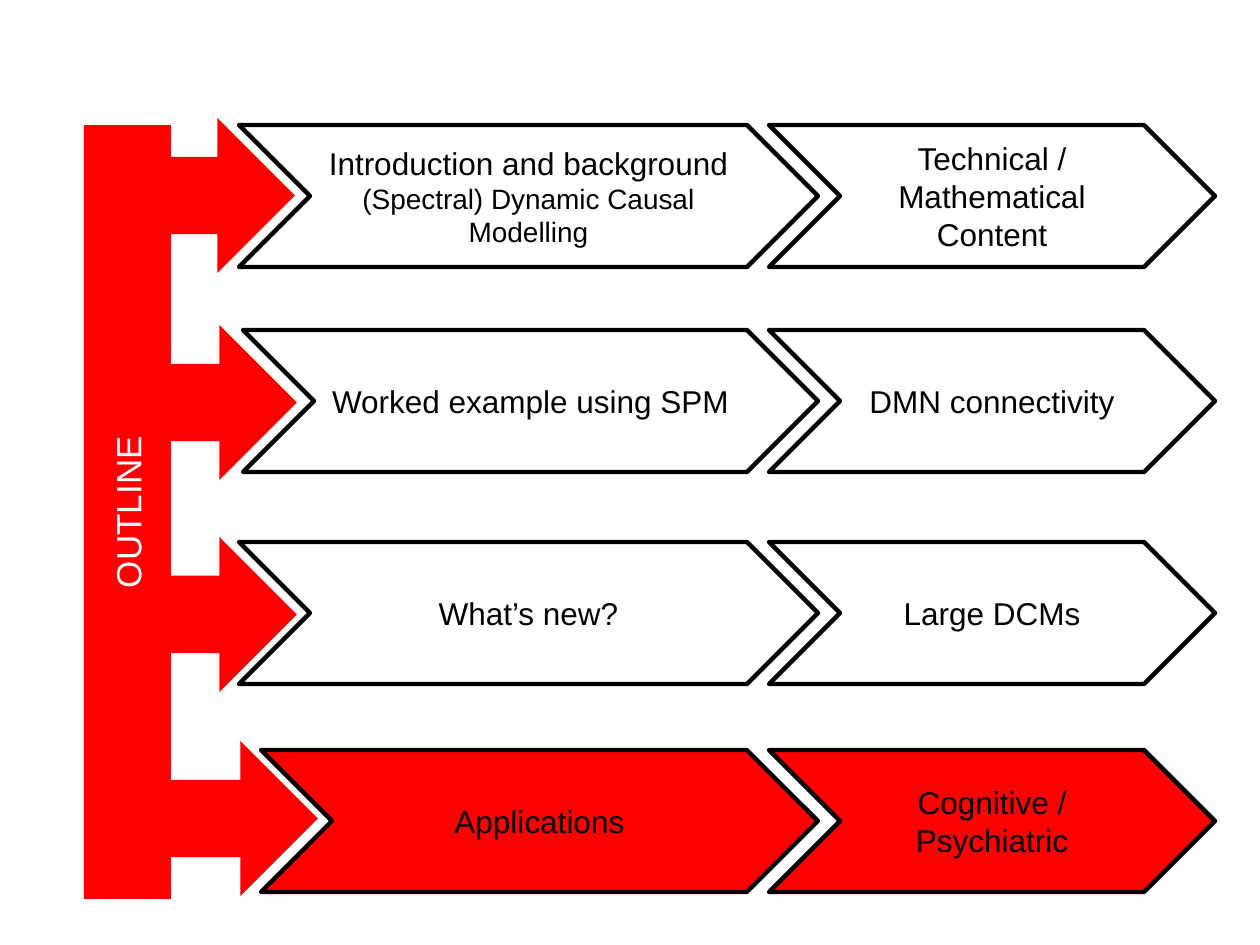
from dataclasses import dataclass

from pptx import Presentation
from pptx.dml.color import RGBColor
from pptx.enum.shapes import MSO_SHAPE
from pptx.enum.text import MSO_ANCHOR, PP_ALIGN
from pptx.util import Pt

PX_PER_INCH = 126
EMU_PER_INCH = 914400
CHEVRON = MSO_SHAPE.CHEVRON
ARROW = MSO_SHAPE.NOTCHED_RIGHT_ARROW
RECT = MSO_SHAPE.RECTANGLE
MIDDLE = MSO_ANCHOR.MIDDLE
CENTER = PP_ALIGN.CENTER


@dataclass(frozen=True)
class Theme:
    font: str = "Arial"
    accent: RGBColor = RGBColor(0xFF, 0x00, 0x00)
    ink: RGBColor = RGBColor(0x00, 0x00, 0x00)
    paper: RGBColor = RGBColor(0xFF, 0xFF, 0xFF)
    title: int = 20
    body: int = 18
    detail: int = 16
    outline: float = 2.5


THEME = Theme()
ROW_H = 142
TOPIC_RIGHT = 818
DETAIL_LEFT, DETAIL_W = 769, 446
ARROW_W, ARROW_H = 192, 155

ROWS = [
    {"top": 125, "left": 239, "arrow": (103, 118), "fill": THEME.paper,
     "topic": [("Introduction and background", THEME.body),
               ("(Spectral) Dynamic Causal Modelling", THEME.detail)],
     "detail": "Technical / Mathematical Content"},
    {"top": 330, "left": 243, "arrow": (105, 325), "fill": None,
     "topic": [("Worked example using SPM", THEME.body)],
     "detail": "DMN connectivity"},
    {"top": 542, "left": 239, "arrow": (105, 537), "fill": None,
     "topic": [("What’s new?", THEME.body)],
     "detail": "Large DCMs"},
    {"top": 750, "left": 261, "arrow": (126, 741), "fill": THEME.accent,
     "topic": [("Applications", THEME.body)],
     "detail": "Cognitive / Psychiatric"},
]


def px(n):
    return round(n * EMU_PER_INCH / PX_PER_INCH)


def add_block(s, kind, box, fill, line=None):
    sp = s.shapes.add_shape(kind, *map(px, box))
    sp.shadow.inherit = False
    if fill is None:
        sp.fill.background()
    else:
        sp.fill.solid()
        sp.fill.fore_color.rgb = fill
    if line is None:
        sp.line.fill.background()
    else:
        sp.line.color.rgb = line
        sp.line.width = Pt(THEME.outline)
    return sp


def write_lines(sp, lines, color):
    tf = sp.text_frame
    for name, value in {"word_wrap": True, "vertical_anchor": MIDDLE}.items():
        setattr(tf, name, value)
    for i, (text, size) in enumerate(lines):
        p = tf.paragraphs[0] if i == 0 else tf.add_paragraph()
        p.alignment = CENTER
        r = p.add_run()
        r.text = text
        for name, value in {"name": THEME.font, "size": Pt(size)}.items():
            setattr(r.font, name, value)
        r.font.color.rgb = color


def add_chevron(s, box, fill, lines):
    sp = add_block(s, CHEVRON, box, fill, THEME.ink)
    write_lines(sp, lines, THEME.ink)


def add_outline_bar(s):
    sp = add_block(s, RECT, (84, 125, 87, 774), THEME.accent)
    write_lines(sp, [("OUTLINE", THEME.title)], THEME.paper)
    sp.text_frame._txBody.bodyPr.set("vert", "vert270")


def add_row(s, row):
    top, left, fill = row["top"], row["left"], row["fill"]
    add_chevron(s, (left, top, max(TOPIC_RIGHT - left, 557), ROW_H), fill, row["topic"])
    add_chevron(s, (DETAIL_LEFT, top, DETAIL_W, ROW_H), fill,
                [(row["detail"], THEME.body)])
    add_block(s, ARROW, (*row["arrow"], ARROW_W, ARROW_H), THEME.accent)


def main():
    prs = Presentation()
    prs.slide_width, prs.slide_height = px(1260), px(945)
    s = prs.slides.add_slide(prs.slide_layouts[6])
    for row in ROWS:
        add_row(s, row)
    add_outline_bar(s)
    prs.save("out.pptx")


if __name__ == "__main__":
    main()
